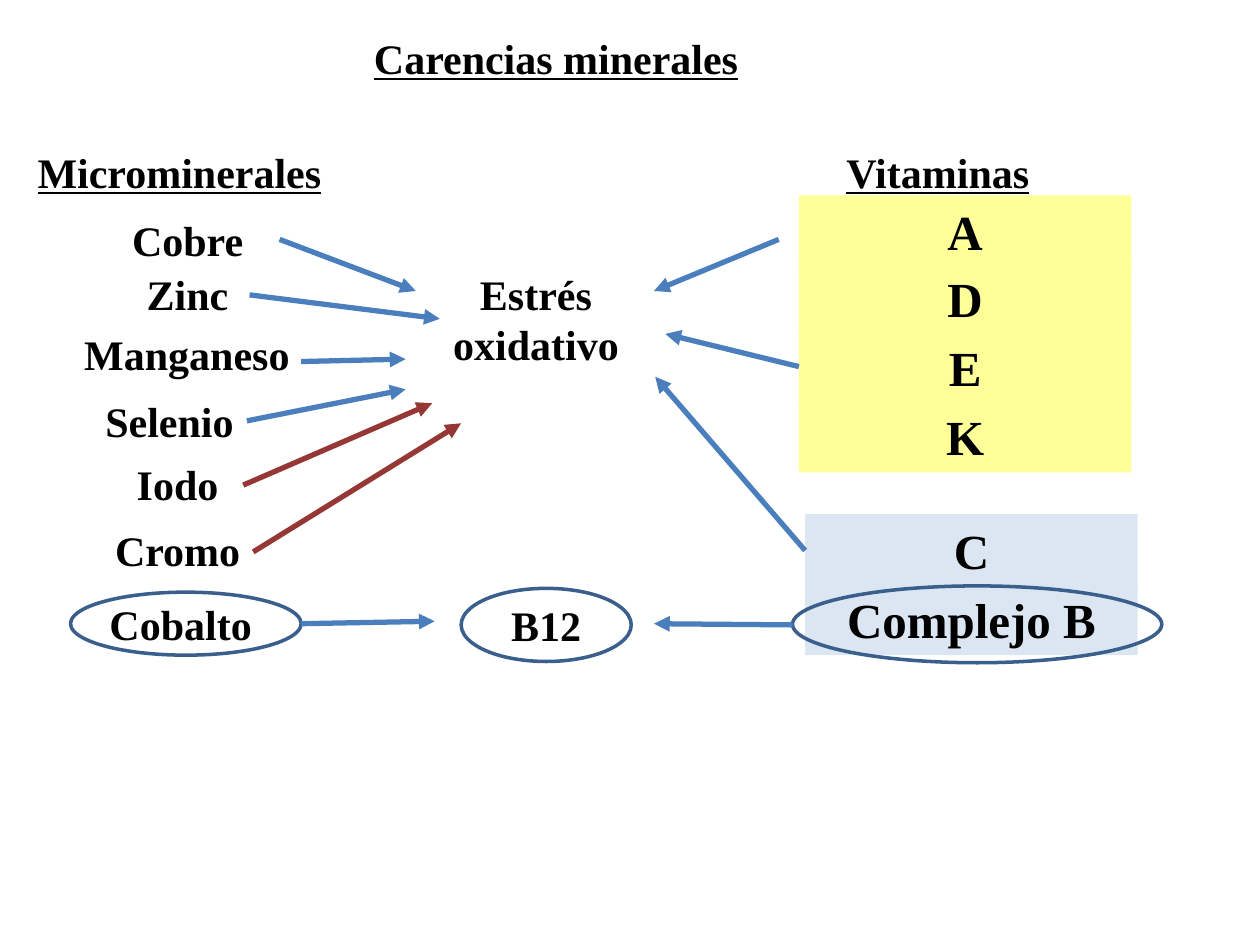
from lxml import etree
from pptx import Presentation
from pptx.dml.color import RGBColor
from pptx.enum.shapes import MSO_CONNECTOR, MSO_SHAPE
from pptx.enum.text import MSO_ANCHOR, MSO_AUTO_SIZE, PP_ALIGN
from pptx.oxml.ns import qn
from pptx.util import Pt

COLORS = {"text": "000000", "arrow": "4B7EBC", "red": "953735",
          "outline": "3A5F8C", "yellow": "FFFF99", "blue": "DCE6F2"}
RGB = {name: RGBColor.from_string(value) for name, value in COLORS.items()}

prs = Presentation()
prs.slide_width, prs.slide_height = Pt(720), Pt(540)
s = prs.slides.add_slide(prs.slide_layouts[6])


def write(sp, text, size=24, align=PP_ALIGN.CENTER, underline=None):
    tf = sp.text_frame
    tf.text = text
    for p in tf.paragraphs:
        p.alignment = align
        p.font.name, p.font.size, p.font.bold = "Times New Roman", Pt(size), True
        p.font.color.rgb = RGB["text"]
        for r in p.runs:
            r.font.underline = underline
    return tf


def add_shape(kind, x, y, w, h, fill=None):
    sp = s.shapes.add_shape(kind, Pt(x), Pt(y), Pt(w), Pt(h))
    sp.shadow.inherit = False
    if fill:
        sp.fill.solid()
        sp.fill.fore_color.rgb = RGB[fill]
        sp.line.fill.background()
    else:
        sp.fill.background()
        sp.line.color.rgb = RGB["outline"]
        sp.line.width = Pt(2)
    return sp


# Headings, minerals and the central label
LEFT, CENTER = PP_ALIGN.LEFT, PP_ALIGN.CENTER
labels = [
    ("Carencias minerales", 206.6, 15.1, 224.6, 36, LEFT, True),
    ("Microminerales", 14.4, 80, 184.3, 36, LEFT, True),
    ("Vitaminas", 476.6, 80, 126, 36, LEFT, True),
    ("Cobre ", 67.7, 118.8, 85, 36, CENTER, None),
    ("Zinc ", 76.3, 149.8, 67.7, 36, CENTER, None),
    ("Manganeso ", 40.3, 184.3, 139, 36, CENTER, None),
    ("Selenio", 52.6, 222.5, 88.6, 36, CENTER, None),
    ("Iodo ", 70.6, 258.5, 67.7, 36, CENTER, None),
    ("Cromo", 57.6, 296, 87.8, 36, CENTER, None),
    ("Cobalto ", 54.7, 338.4, 103, 36, CENTER, None),
    ("Estrés \noxidativo ", 251.3, 149.8, 116, 65.5, CENTER, None),
]
for text, x, y, w, h, align, underline in labels:
    sp = s.shapes.add_textbox(Pt(x), Pt(y), Pt(w), Pt(h))
    tf = write(sp, text, 24, align, underline)
    tf.word_wrap = False
    tf.auto_size = MSO_AUTO_SIZE.SHAPE_TO_FIT_TEXT
    if text in ("Microminerales", "Vitaminas"):
        tf.paragraphs[0].add_run().text = " "

# Vitamin boxes
vitamins = [("A", 456.5, 111.6, "yellow"), ("D", 456.5, 149.8, "yellow"),
            ("E", 456.5, 189.4, "yellow"), ("K", 456.5, 229, "yellow"),
            ("C", 460.1, 293.8, "blue"), ("Complejo B", 460.1, 333.4, "blue")]
for text, x, y, fill in vitamins:
    sp = add_shape(MSO_SHAPE.RECTANGLE, x, y, 190.1, 41, fill)
    tf = write(sp, text, 28)
    tf.vertical_anchor = MSO_ANCHOR.TOP
    tf.word_wrap = True
    tf.auto_size = MSO_AUTO_SIZE.SHAPE_TO_FIT_TEXT

# Ellipses around Cobalto, B12 and Complejo B
add_shape(MSO_SHAPE.OVAL, 40.3, 338.4, 131.8, 36)
write(add_shape(MSO_SHAPE.OVAL, 263.5, 336.2, 97.2, 41.8), "B12")
add_shape(MSO_SHAPE.OVAL, 452.9, 334.8, 211, 43.9)

# Arrows: start, end, colour
arrows = [
    # Microminerales to Estrés oxidativo
    (159.8, 136.8, 237.6, 166.3, "arrow"), (142.6, 168.5, 251.3, 182.2, "arrow"),
    (172.1, 206.6, 231.8, 205.2, "arrow"), (141.1, 240.5, 231.8, 222.5, "arrow"),
    (139, 277.2, 247, 230.4, "red"), (144.7, 315.4, 263.5, 241.9, "red"),
    # Vitaminas to Estrés oxidativo
    (445, 136.8, 373.7, 166.3, "arrow"), (456.5, 209.5, 380.2, 190.8, "arrow"),
    (460.1, 314.6, 374.4, 215.3, "arrow"),
    # Cobalto and Complejo B to B12
    (172.1, 356.4, 248.4, 355, "arrow"), (452.9, 357.1, 373.7, 356.4, "arrow"),
]
for x1, y1, x2, y2, color in arrows:
    cn = s.shapes.add_connector(MSO_CONNECTOR.STRAIGHT, Pt(x1), Pt(y1), Pt(x2), Pt(y2))
    cn.line.color.rgb = RGB[color]
    cn.line.width = Pt(3)
    etree.SubElement(cn.line._get_or_add_ln(), qn("a:tailEnd"), type="triangle")
    etree.SubElement(cn._element.spPr, qn("a:effectLst"))

prs.save("out.pptx")
